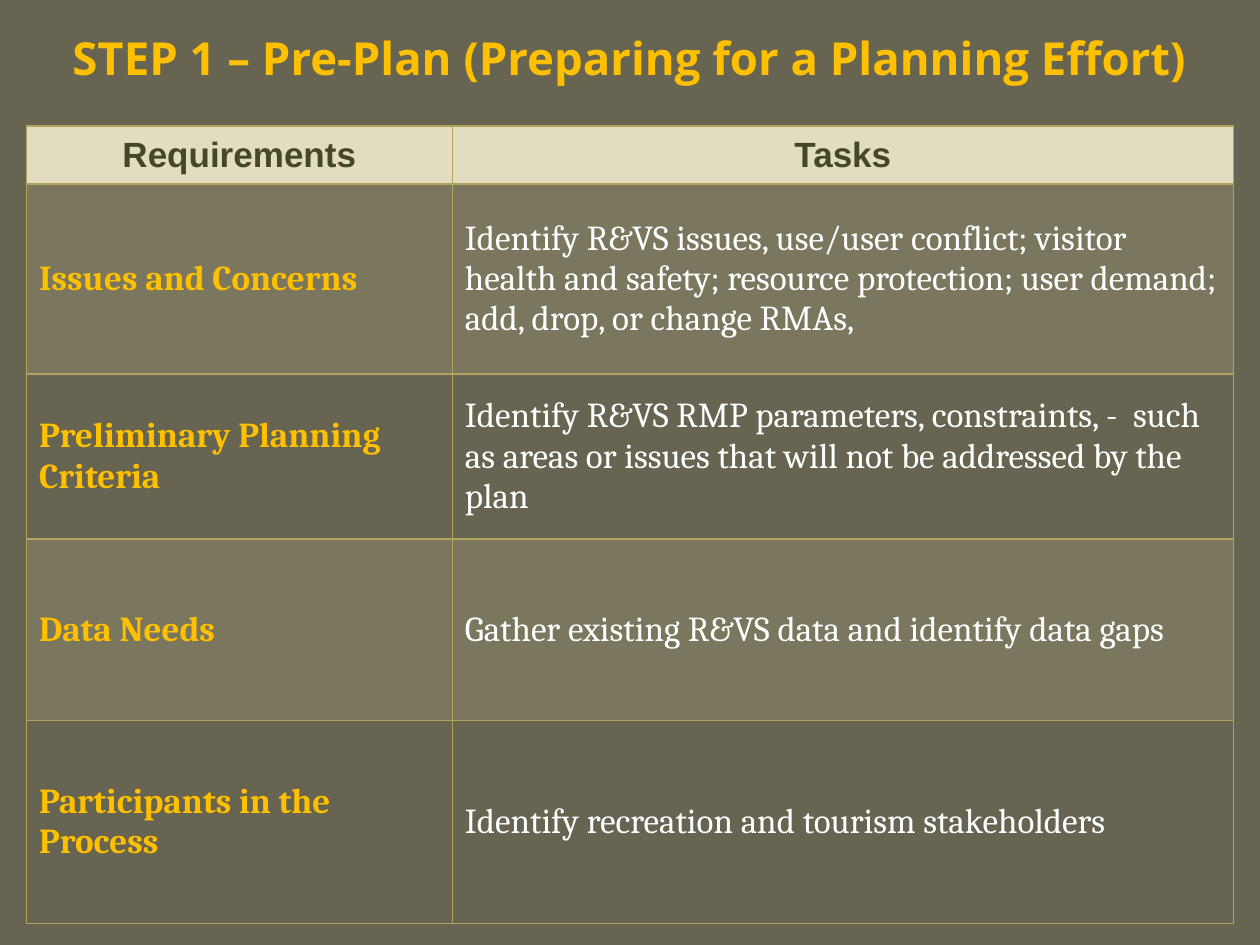
from lxml import etree
from pptx import Presentation
from pptx import util as u
from pptx.dml.color import RGBColor
from pptx.enum import text
from pptx.oxml.ns import qn

BACK = RGBColor(0x67, 0x64, 0x51)
GOLD = RGBColor(0xFF, 0xC0, 0x00)
WHITE = RGBColor(0xFF, 0xFF, 0xFF)
OLIVE = RGBColor(0x45, 0x47, 0x2B)
CREAM = RGBColor(0xE2, 0xDC, 0xC1)
BAND = RGBColor(0xCE, 0xC5, 0x97)
EDGE = RGBColor(0xB1, 0xA3, 0x5A)

HEAD = {"name": "Arial", "size": u.Pt(20), "bold": True}
NEED = {"name": "Cambria", "size": u.Pt(20), "bold": True}
TASK = {"name": "Cambria", "size": u.Pt(20), "bold": False}

COLS = [3.38, 6.2]
ROWS = [
    (0.46, "Requirements", "Tasks"),
    (1.51, "Issues and Concerns",
     "Identify R&VS issues, use/user conflict; visitor health and safety; "
     "resource protection; user demand; add, drop, or change RMAs,"),
    (1.31, "Preliminary Planning Criteria",
     "Identify R&VS RMP parameters, constraints, -  such as areas or issues "
     "that will not be addressed by the plan"),
    (1.44, "Data Needs", "Gather existing R&VS data and identify data gaps"),
    (1.61, "Participants in the Process",
     "Identify recreation and tourism stakeholders"),
]


def write(frame, words, look, color, align):
    frame.text = words
    para = frame.paragraphs[0]
    para.alignment = align
    para.space_before = u.Pt(0)
    font = para.runs[0].font
    for key, value in look.items():
        setattr(font, key, value)
    font.color.rgb = color


def add_title(slide):
    title = slide.shapes.title
    place = {"left": 0, "top": 0.08, "width": 10, "height": 0.75}
    for key, value in place.items():
        setattr(title, key, u.Inches(value))
    frame = title.text_frame
    frame.word_wrap = True
    frame.vertical_anchor = text.MSO_ANCHOR.MIDDLE
    look = {"name": "Open Sans", "size": u.Pt(26), "bold": True}
    write(frame, "STEP 1 – Pre-Plan (Preparing for a Planning Effort)",
          look, GOLD, text.PP_ALIGN.CENTER)


def add_edges(cell):
    props = cell._tc.get_or_add_tcPr()
    for spot, side in enumerate(("a:lnL", "a:lnR", "a:lnT", "a:lnB")):
        line = etree.Element(qn(side), w=str(u.Pt(1)))
        fill = etree.SubElement(line, qn("a:solidFill"))
        etree.SubElement(fill, qn("a:srgbClr"), val=str(EDGE))
        props.insert(spot, line)


def paint(cell, row):
    if row and row % 2 == 0:
        cell.fill.background()
        return
    cell.fill.solid()
    cell.fill.fore_color.rgb = BAND if row else CREAM
    if row:
        tint = cell._tc.tcPr.find(".//" + qn("a:srgbClr"))
        etree.SubElement(tint, qn("a:alpha"), val="20000")


def add_grid(slide):
    high = sum(row[0] for row in ROWS)
    spot = [u.Inches(n) for n in (0.21, 1, sum(COLS), high)]
    table = slide.shapes.add_table(len(ROWS), len(COLS), *spot).table
    for col, wide in zip(table.columns, COLS):
        col.width = u.Inches(wide)
    for r, (tall, *words) in enumerate(ROWS):
        table.rows[r].height = u.Inches(tall)
        for c, word in enumerate(words):
            cell = table.cell(r, c)
            cell.vertical_anchor = text.MSO_ANCHOR.MIDDLE
            look, color = ((NEED, GOLD), (TASK, WHITE))[c]
            align = text.PP_ALIGN.LEFT
            if r == 0:
                look, color, align = HEAD, OLIVE, text.PP_ALIGN.CENTER
            write(cell.text_frame, word, look, color, align)
            paint(cell, r)
            add_edges(cell)


def main():
    deck = Presentation()
    deck.slide_width = u.Inches(10)
    deck.slide_height = u.Inches(7.5)
    slide = deck.slides.add_slide(deck.slide_layouts[5])
    slide.background.fill.solid()
    slide.background.fill.fore_color.rgb = BACK
    add_title(slide)
    add_grid(slide)
    deck.save("out.pptx")


if __name__ == "__main__":
    main()
